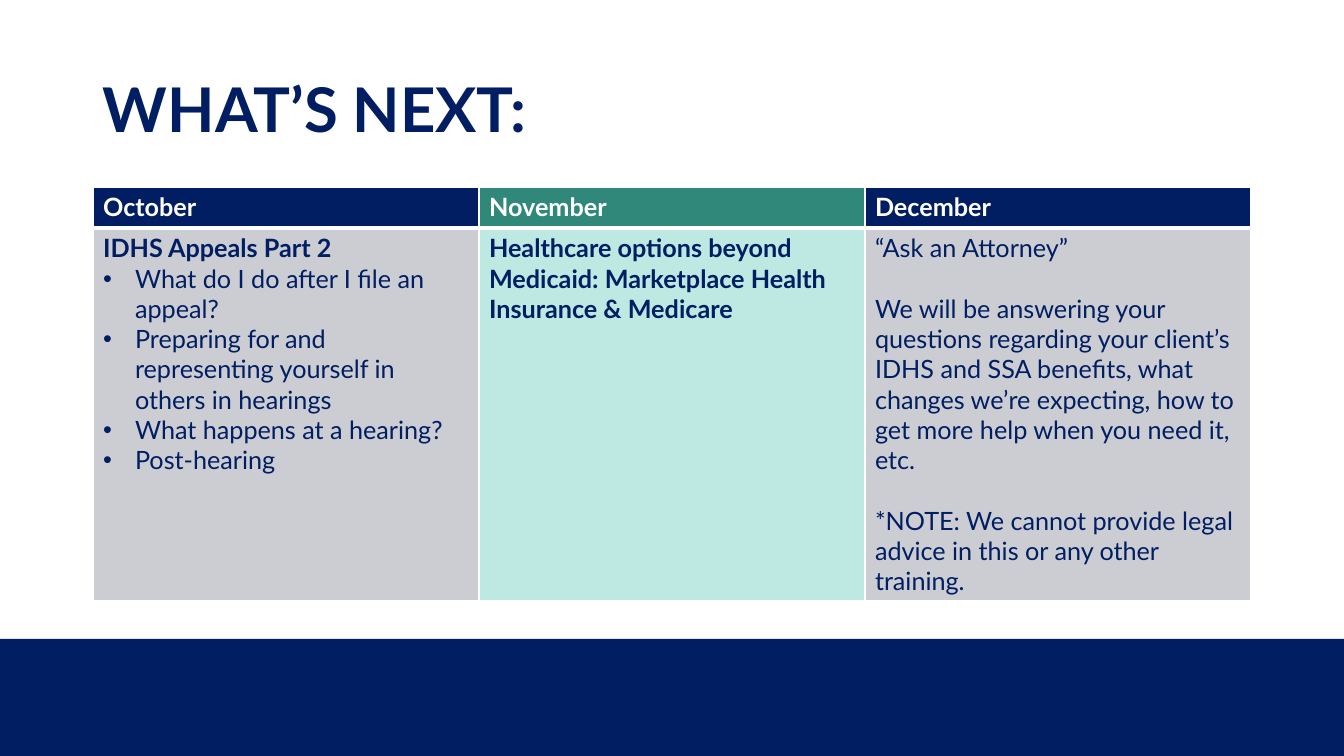
from lxml import etree
from pptx import Presentation
from pptx import util as u
from pptx.dml.color import RGBColor
from pptx.enum import shapes, text
from pptx.oxml.ns import qn

PX = 914400 / 100.8
COLORS = {"navy": "001E61", "green": "2F887A", "gray": "CCCDD2", "mint": "BEE9E2", "white": "FFFFFF"}
GAP = {"space_before": u.Pt(21.6)}
MONTHS = [
    ("October", "navy", "gray", [
        ("IDHS Appeals Part 2", True, False, {}),
        ("What do I do after I file an appeal?", False, True, {}),
        ("Preparing for and representing yourself in others in hearings", False, True, {}),
        ("What happens at a hearing?", False, True, {}),
        ("Post-hearing", False, True, {}),
    ]),
    ("November", "green", "mint", [
        ("Healthcare options beyond Medicaid: Marketplace Health Insurance & Medicare", True, False, {}),
    ]),
    ("December", "navy", "gray", [
        ("“Ask an Attorney”", False, False, {}),
        ("We will be answering your questions regarding your client’s IDHS and SSA benefits, "
         "what changes we’re expecting, how to get more help when you need it, etc.", False, False, GAP),
        ("*NOTE: We cannot provide legal advice in this or any other training.", False, False, GAP),
    ]),
]


def px(n):
    """Turn pixels into EMU."""
    return u.Emu(round(n * PX))


def rgb(name):
    """Look up a palette colour."""
    return RGBColor.from_string(COLORS[name])


def write(p, words, size, color, bold, fmt):
    """Add one formatted run to a paragraph."""
    for key, value in fmt.items():
        setattr(p, key, value)
    r = p.add_run()
    r.text = words
    for key, value in {"name": "Lato", "size": u.Pt(size), "bold": bold}.items():
        setattr(r.font, key, value)
    r.font.color.rgb = rgb(color)


def bullet(p):
    """Give a paragraph a hanging bullet."""
    pPr = p._p.get_or_add_pPr()
    pPr.set("marL", str(px(32)))
    pPr.set("indent", str(px(-32)))
    etree.SubElement(pPr, qn("a:buFont"), typeface="Arial")
    etree.SubElement(pPr, qn("a:buChar"), char="•")


def style_cell(cell, fill, top, bottom):
    """Fill a cell and draw its white borders."""
    cell.fill.solid()
    cell.fill.fore_color.rgb = rgb(fill)
    tcPr = cell._tc.get_or_add_tcPr()
    for i, (side, width) in enumerate({"L": 1, "R": 1, "T": top, "B": bottom}.items()):
        ln = etree.Element(qn("a:ln" + side), w=str(u.Pt(width)))
        solid = etree.SubElement(ln, qn("a:solidFill"))
        etree.SubElement(solid, qn("a:srgbClr"), val=COLORS["white"])
        tcPr.insert(i, ln)


def add_band(s, x, y, w, h):
    """Draw the footer band."""
    sp = s.shapes.add_shape(shapes.MSO_SHAPE.RECTANGLE, px(x), px(y), px(w), px(h))
    sp.shadow.inherit = False
    sp.fill.solid()
    sp.fill.fore_color.rgb = rgb("navy")
    sp.line.fill.background()


def add_title(s, x, y, w, h):
    """Place the heading."""
    tf = s.shapes.add_textbox(px(x), px(y), px(w), px(h)).text_frame
    for key, value in {"word_wrap": True, "vertical_anchor": text.MSO_ANCHOR.MIDDLE}.items():
        setattr(tf, key, value)
    write(tf.paragraphs[0], "WHAT’S NEXT:", 44, "navy", True, {"line_spacing": 0.9})


def add_schedule(s, x, y, w, h, head_h):
    """Build the month table, one column a month."""
    frame = s.shapes.add_table(2, len(MONTHS), px(x), px(y), px(w), px(h))
    table = frame.table
    table.rows[0].height = px(head_h)
    table.rows[1].height = px(h - head_h)
    for col, (month, head_fill, body_fill, lines) in enumerate(MONTHS):
        table.columns[col].width = px(w / len(MONTHS))
        head, body = table.cell(0, col), table.cell(1, col)
        style_cell(head, head_fill, 1, 3)
        style_cell(body, body_fill, 3, 1)
        write(head.text_frame.paragraphs[0], month, 18, "white", True, {})
        tf = body.text_frame
        for i, (words, bold, bulleted, fmt) in enumerate(lines):
            p = tf.add_paragraph() if i else tf.paragraphs[0]
            if bulleted:
                bullet(p)
            write(p, words, 18, "navy", bold, fmt)


def main():
    """Build and save the slide."""
    prs = Presentation()
    prs.slide_width, prs.slide_height = px(1344), px(756)
    s = prs.slides.add_slide(prs.slide_layouts[6])
    add_band(s, 0, 639, 1344, 117)
    add_title(s, 93, 40, 1159, 146)
    add_schedule(s, 93, 187, 1158, 413, 41)
    prs.save("out.pptx")


if __name__ == "__main__":
    main()
